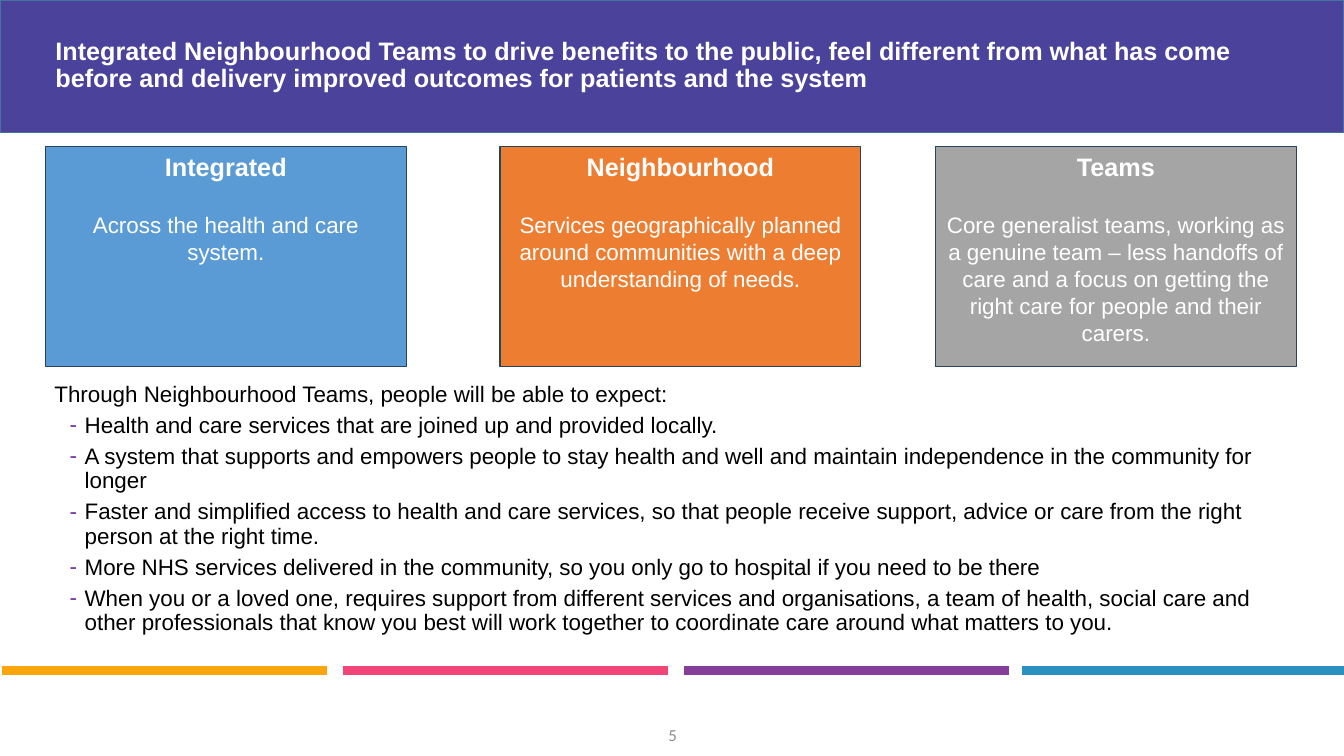
from dataclasses import dataclass

from lxml import etree
from pptx import Presentation
from pptx.dml.color import RGBColor
from pptx.enum.shapes import MSO_CONNECTOR, MSO_SHAPE
from pptx.enum.text import MSO_ANCHOR, MSO_AUTO_SIZE, PP_ALIGN
from pptx.oxml.ns import qn
from pptx.util import Inches, Pt

LEFT, CENTER = PP_ALIGN.LEFT, PP_ALIGN.CENTER
TOP, MIDDLE = MSO_ANCHOR.TOP, MSO_ANCHOR.MIDDLE
RECTANGLE = MSO_SHAPE.RECTANGLE
STRAIGHT = MSO_CONNECTOR.STRAIGHT
NO_AUTOFIT = MSO_AUTO_SIZE.NONE
TITLE_AND_CONTENT = 1


@dataclass(frozen=True)
class Theme:
    font: str = "Arial"
    number_font: str = "Calibri"
    heading_size: int = 18
    body_size: int = 16
    number_size: int = 12
    white: str = "FFFFFF"
    black: str = "000000"
    grey: str = "8C8C8C"
    banner: str = "4B429B"
    banner_edge: str = "43739E"
    card_edge: str = "28445D"
    dash: str = "7030A0"


THEME = Theme()

TITLE = ("Integrated Neighbourhood Teams to drive benefits to the public, feel different "
         "from what has come before and delivery improved outcomes for patients and the system")

# Left edge in percent of the width, fill, heading, text
CARDS = [
    (3.38, "5B9BD5", "Integrated", "Across the health and care system."),
    (37.2, "ED7D31", "Neighbourhood",
     "Services geographically planned around communities with a deep understanding of needs."),
    (69.6, "A5A5A5", "Teams",
     "Core generalist teams, working as a genuine team – less handoffs of care and a focus "
     "on getting the right care for people and their carers."),
]

INTRO = "Through Neighbourhood Teams, people will be able to expect:"
EXPECTATIONS = [
    "Health and care services that are joined up and provided locally.",
    "A system that supports and empowers people to stay health and well and maintain "
    "independence in the community for longer",
    "Faster and simplified access to health and care services, so that people receive "
    "support, advice or care from the right person at the right time.",
    "More NHS services delivered in the community, so you only go to hospital if you "
    "need to be there",
    "When you or a loved one, requires support from different services and organisations, "
    "a team of health, social care and other professionals that know you best will work "
    "together to coordinate care around what matters to you.",
]

# Start and end in percent of the width, colour
STRIPES = [
    (0.15, 24.3, "F9A50E"),
    (25.5, 49.7, "F24678"),
    (50.9, 75.1, "853E9A"),
    (76.05, 100, "2A90C0"),
]


def write(para, text, size=THEME.body_size, color=THEME.black, font=THEME.font, bold=False,
          align=LEFT, before=0, spacing=1.0):
    para.alignment = align
    para.space_before = Pt(before)
    para.line_spacing = spacing
    span = para.add_run()
    span.text = text
    span.font.name = font
    span.font.size = Pt(size)
    span.font.bold = bold
    span.font.color.rgb = RGBColor.from_string(color)


def set_bullet(para, mark=None, color=None, margin=0.0, hanging=0.0):
    """Give the paragraph a coloured bullet mark, or none, with its indents in inches."""
    properties = para._p.get_or_add_pPr()
    properties.set("marL", str(Inches(margin)))
    properties.set("indent", str(-Inches(hanging)))
    if mark is None:
        etree.SubElement(properties, qn("a:buNone"))
        return
    bullet_color = etree.SubElement(properties, qn("a:buClr"))
    etree.SubElement(bullet_color, qn("a:srgbClr"), val=color)
    etree.SubElement(properties, qn("a:buChar"), char=mark)


class Page:
    """One slide; every position and size is a percentage of the slide's size."""

    def __init__(self, deck, theme):
        self.deck = deck
        self.theme = theme
        self.slide = deck.slides.add_slide(deck.slide_layouts[TITLE_AND_CONTENT])
        self.shapes = self.slide.shapes

    def area(self, left, top, width, height):
        across, down = self.deck.slide_width / 100, self.deck.slide_height / 100
        return [round(length) for length in
                (left * across, top * down, width * across, height * down)]

    def place(self, holder, area, anchor):
        """Move a placeholder to the front and return its text frame."""
        holder.left, holder.top, holder.width, holder.height = self.area(*area)
        self.shapes._spTree.append(holder._element)
        frame = holder.text_frame
        frame.auto_size = NO_AUTOFIT
        frame.word_wrap = True
        frame.vertical_anchor = anchor
        return frame

    def rectangle(self, area, fill, edge):
        box = self.shapes.add_shape(RECTANGLE, *self.area(*area))
        box.shadow.inherit = False
        box.fill.solid()
        box.fill.fore_color.rgb = RGBColor.from_string(fill)
        box.line.color.rgb = RGBColor.from_string(edge)
        box.line.width = Pt(1)
        return box

    def stripe(self, start, end, top, color):
        left, level, width, _ = self.area(start, top, end - start, 0)
        line = self.shapes.add_connector(STRAIGHT, left, level, left + width, level)
        line.line.color.rgb = RGBColor.from_string(color)
        line.line.width = Pt(6)
        etree.SubElement(line._element.spPr, qn("a:effectLst"))

    def title(self, text, area):
        frame = self.place(self.shapes.title, area, MIDDLE)
        write(frame.paragraphs[0], text, size=self.theme.heading_size,
              color=self.theme.white, bold=True, spacing=0.9)

    def bullets(self, intro, items, area):
        frame = self.place(self.slide.placeholders[1], area, TOP)
        set_bullet(frame.paragraphs[0])
        write(frame.paragraphs[0], intro, spacing=0.9)
        for item in items:
            para = frame.add_paragraph()
            para.level = 1
            set_bullet(para, "-", self.theme.dash, margin=0.3, hanging=0.15)
            write(para, item, before=5, spacing=0.9)

    def card(self, area, fill, heading, text):
        frame = self.rectangle(area, fill, self.theme.card_edge).text_frame
        frame.word_wrap = True
        frame.vertical_anchor = TOP
        write(frame.paragraphs[0], heading, size=self.theme.heading_size,
              color=self.theme.white, bold=True, align=CENTER)
        write(frame.add_paragraph(), text, color=self.theme.white, align=CENTER, before=21)

    def number(self, text, area):
        frame = self.shapes.add_textbox(*self.area(*area)).text_frame
        frame.word_wrap = True
        frame.vertical_anchor = MIDDLE
        write(frame.paragraphs[0], text, size=self.theme.number_size, color=self.theme.grey,
              font=self.theme.number_font, align=CENTER)


def main():
    deck = Presentation()
    deck.slide_width, deck.slide_height = Inches(13.33), Inches(7.5)
    page = Page(deck, THEME)
    page.rectangle((0, 0, 100, 17.5), THEME.banner, THEME.banner_edge)
    for start, end, color in STRIPES:
        page.stripe(start, end, 88.7, color)
    page.bullets(INTRO, EXPECTATIONS, (3.3, 50, 93.4, 38.5))
    page.number("5", (38.8, 94.5, 22.5, 5.3))
    page.title(TITLE, (3.38, 4.8, 93.3, 7.9))
    for left, fill, heading, text in CARDS:
        page.card((left, 19.4, 26.85, 29.1), fill, heading, text)
    deck.save("out.pptx")


if __name__ == "__main__":
    main()
